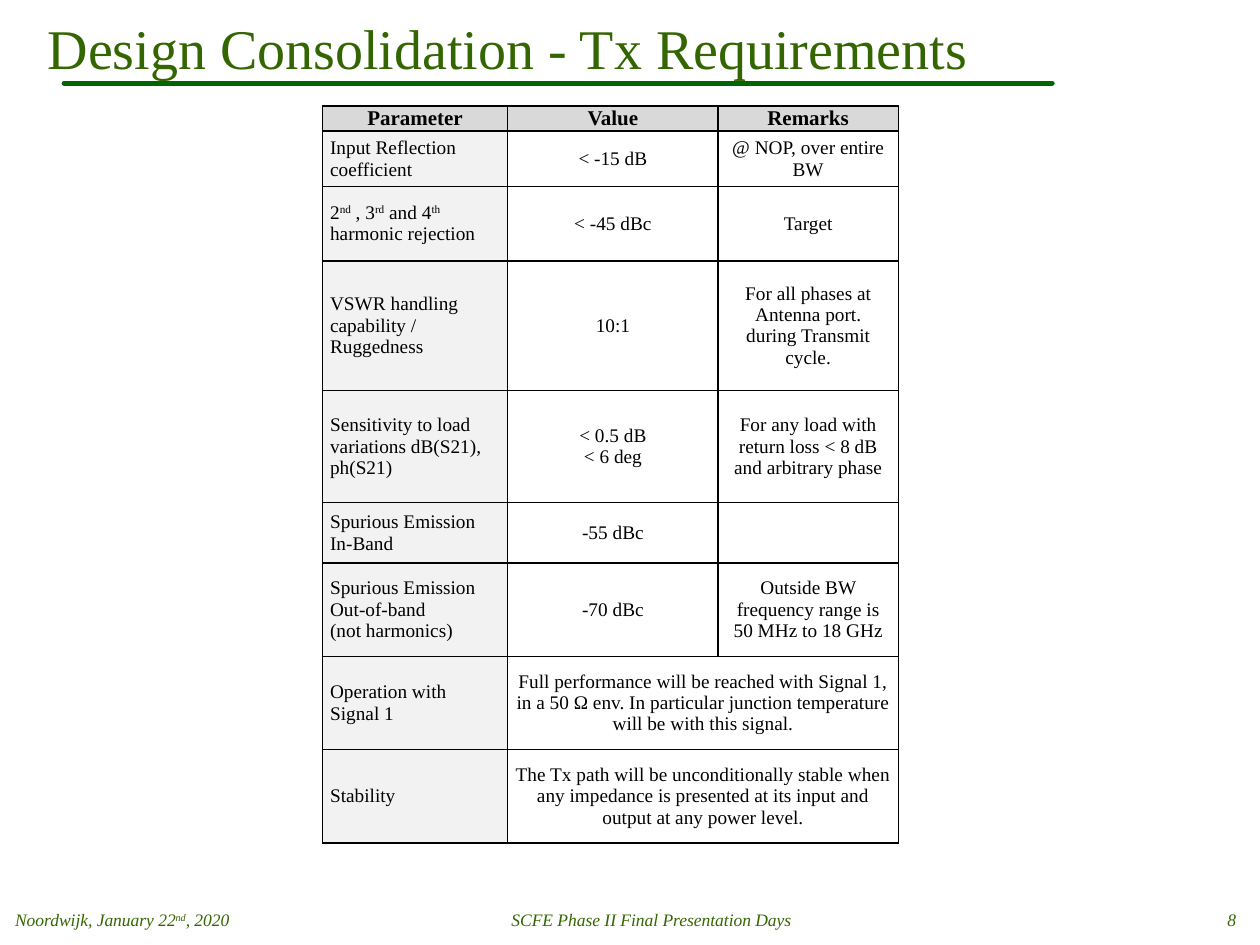
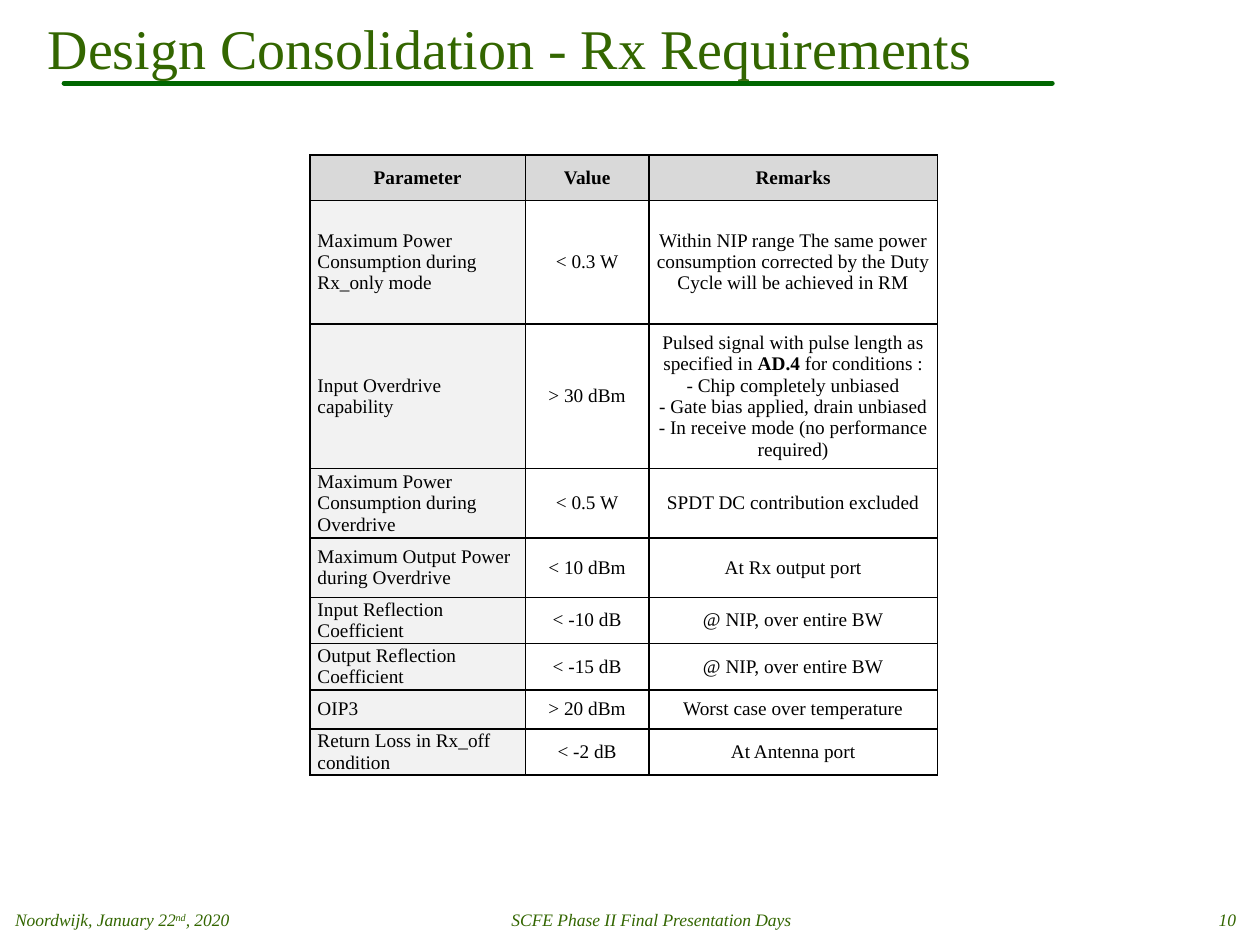
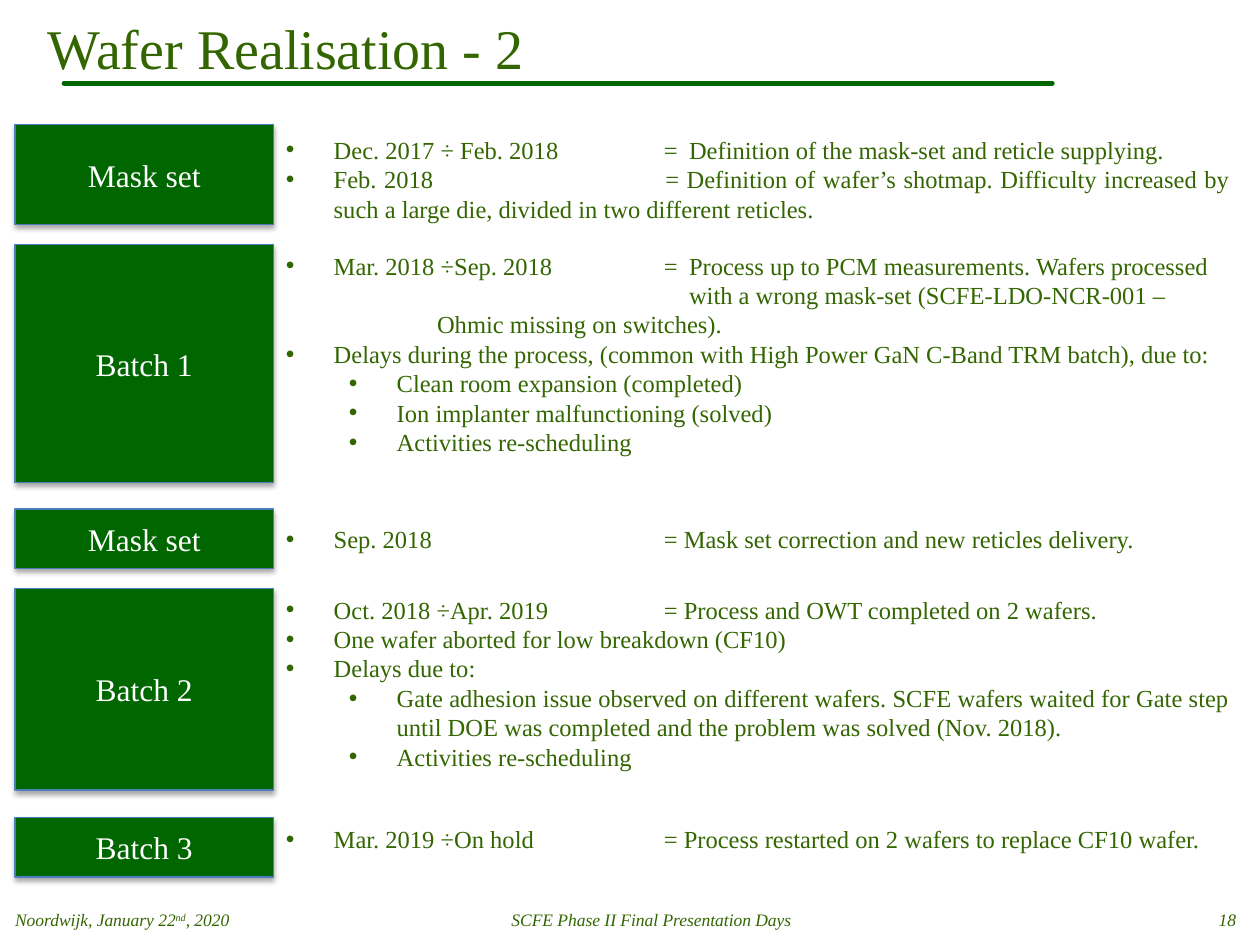
from lxml import etree
from pptx import Presentation
from pptx.dml.color import RGBColor
from pptx.enum import shapes, text
from pptx.oxml import ns
from pptx.util import Inches, Pt

FONT = "Times New Roman"
TEXT_GREEN = RGBColor(0x33, 0x66, 0x00)
BAND_GREEN = RGBColor(0x00, 0x66, 0x00)
BOX_EDGE = RGBColor(0x4B, 0x7E, 0xBC)
HEADER_GREY = RGBColor(0xD9, 0xD9, 0xD9)
LABEL_GREY = RGBColor(0xF2, 0xF2, 0xF2)
WHITE = RGBColor(0xFF, 0xFF, 0xFF)
BLACK = RGBColor(0x00, 0x00, 0x00)

LEFT = text.PP_ALIGN.LEFT
CENTER = text.PP_ALIGN.CENTER
RIGHT = text.PP_ALIGN.RIGHT
JUSTIFY = text.PP_ALIGN.JUSTIFY
MIDDLE = text.MSO_ANCHOR.MIDDLE


# ---- Shared helpers ----
def add_element(parent, tag, **attributes):
    element = etree.SubElement(parent, ns.qn(tag))
    for name, value in attributes.items():
        element.set(name, str(value))
    return element


def add_runs(paragraph, content, size, color, bold=False, italic=False):
    """Add runs; ^...^ marks superscript and *...* marks bold."""
    for i, part in enumerate(content.split("^")):
        for j, piece in enumerate(part.split("*")):
            if not piece:
                continue
            run = paragraph.add_run()
            run.text = piece
            run.font.name = FONT
            run.font.size = Pt(size)
            run.font.color.rgb = color
            run.font.bold = bold or j % 2 == 1
            run.font.italic = italic
            if i % 2:
                run.font._element.set("baseline", "30000")


def add_textbox(slide, left, top, width, height):
    return slide.shapes.add_textbox(
        Inches(left), Inches(top), Inches(width), Inches(height)).text_frame


# ---- Title, rule and footers of every slide ----
def add_title(slide, title):
    frame = add_textbox(slide, 0.28, 0.07, 8.19, 0.61)
    frame.word_wrap = True
    frame.vertical_anchor = MIDDLE
    add_runs(frame.paragraphs[0], title, 32, TEXT_GREEN)


def add_title_rule(slide):
    rule = slide.shapes.add_connector(
        shapes.MSO_CONNECTOR.STRAIGHT,
        Inches(0.51), Inches(0.66), Inches(8.35), Inches(0.66))
    rule.line.color.rgb = BAND_GREEN
    rule.line.width = Pt(3)
    rule.line._get_or_add_ln().set("cap", "rnd")
    add_element(rule._element.spPr, "a:effectLst")


def add_footers(slide, number):
    footers = [
        (0.12, 1.89, LEFT, "Noordwijk, January 22^nd^, 2020"),
        (4.06, 2.4, LEFT, "SCFE Phase II Final Presentation Days"),
        (8.39, 1.42, RIGHT, str(number)),
    ]
    for left, width, alignment, content in footers:
        frame = add_textbox(slide, left, 7.14, width, 0.32)
        frame.word_wrap = True
        frame.vertical_anchor = MIDDLE
        frame.margin_left = frame.margin_right = 0
        frame.margin_top = frame.margin_bottom = Inches(0.08)
        paragraph = frame.paragraphs[0]
        paragraph.alignment = alignment
        add_runs(paragraph, content, 10, TEXT_GREEN, italic=True)


def add_base_slide(presentation, title, number):
    slide = presentation.slides.add_slide(presentation.slide_layouts[6])
    add_title_rule(slide)
    add_footers(slide, number)
    add_title(slide, title)
    return slide


# ---- Requirement tables ----
def add_borders(cell):
    properties = cell._tc.get_or_add_tcPr()
    for side in ("a:lnL", "a:lnR", "a:lnT", "a:lnB"):
        line = add_element(properties, side, w=Pt(1))
        fill = add_element(line, "a:solidFill")
        add_element(fill, "a:srgbClr", val=BLACK)


def format_cell(cell, content, is_header, is_label, size):
    add_borders(cell)
    if is_header or is_label:
        cell.fill.solid()
        cell.fill.fore_color.rgb = HEADER_GREY if is_header else LABEL_GREY
    else:
        cell.fill.background()
    cell.vertical_anchor = MIDDLE
    cell.margin_left = cell.margin_right = Inches(0.06)
    cell.margin_top = cell.margin_bottom = 0
    for i, line in enumerate((content or "").split("\n")):
        frame = cell.text_frame
        paragraph = frame.add_paragraph() if i else frame.paragraphs[0]
        paragraph.alignment = LEFT if is_label and not is_header else CENTER
        add_runs(paragraph, line, size, BLACK, bold=is_header)


def add_requirements(slide, box, widths, heights, rows, header_size):
    """Fill a table; None joins a cell with the one on its left."""
    table = slide.shapes.add_table(
        len(rows), len(widths), *(Inches(length) for length in box)).table
    table.first_row = table.horz_banding = False
    for column, width in zip(table.columns, widths):
        column.width = Inches(width)
    for row, height in zip(table.rows, heights):
        row.height = Inches(height)
    for i, row in enumerate(rows):
        for j, content in enumerate(row):
            format_cell(table.cell(i, j), content, i == 0, j == 0,
                        11 if i else header_size)
            if content is None:
                table.cell(i, j - 1).merge(table.cell(i, j))


HEADER = ("Parameter", "Value", "Remarks")

TX_ROWS = [
    HEADER,
    ("Input Reflection coefficient", "< -15 dB", "@ NOP, over entire BW"),
    ("2^nd^ , 3^rd^ and 4^th^ harmonic rejection", "< -45 dBc", "Target"),
    ("VSWR handling capability / Ruggedness", "10:1",
     "For all phases at Antenna port.\nduring Transmit cycle."),
    ("Sensitivity to load\nvariations dB(S21), ph(S21)",
     "< 0.5 dB\n< 6 deg",
     "For any load with return loss < 8 dB and arbitrary phase"),
    ("Spurious Emission In-Band", "-55 dBc", ""),
    ("Spurious Emission Out-of-band\n(not harmonics)", "-70 dBc",
     "Outside BW frequency range is 50 MHz to 18 GHz"),
    ("Operation with Signal 1",
     "Full performance will be reached with Signal 1, in a 50 Ω env. "
     "In particular junction temperature will be with this signal.", None),
    ("Stability",
     "The Tx path will be unconditionally stable when any impedance is "
     "presented at its input and output at any power level.", None),
]

RX_ROWS = [
    HEADER,
    ("Maximum Power Consumption during Rx_only mode", "< 0.3 W",
     "Within NIP range The same power consumption corrected by the Duty "
     "Cycle will be achieved in RM"),
    ("Input Overdrive capability", "> 30 dBm",
     "Pulsed signal with pulse length as specified in *AD.4* for conditions :\n"
     "- Chip completely unbiased\n"
     "- Gate bias applied, drain unbiased\n"
     "- In receive mode (no performance required)"),
    ("Maximum Power Consumption during Overdrive", "< 0.5 W",
     "SPDT DC contribution excluded"),
    ("Maximum Output Power during Overdrive", "< 10 dBm", "At Rx output port"),
    ("Input Reflection Coefficient", "< -10 dB", "@ NIP, over entire BW"),
    ("Output Reflection Coefficient", "< -15 dB", "@ NIP, over entire BW"),
    ("OIP3", "> 20 dBm", "Worst case over temperature"),
    ("Return Loss in Rx_off condition", "< -2 dB", "At Antenna port"),
]


# ---- Wafer timeline ----
def add_phase_box(slide, top, height, label):
    box = slide.shapes.add_shape(
        shapes.MSO_SHAPE.RECTANGLE,
        Inches(0.12), Inches(top), Inches(2.05), Inches(height))
    box.fill.solid()
    box.fill.fore_color.rgb = BAND_GREEN
    box.line.color.rgb = BOX_EDGE
    box.line.width = Pt(0.75)
    # Soft shadow below the box
    effects = add_element(box._element.spPr, "a:effectLst")
    shadow = add_element(effects, "a:outerShdw", blurRad=Pt(3.1), dist=Pt(1.8),
                         dir=90 * 60000, rotWithShape=0)
    color = add_element(shadow, "a:srgbClr", val=BLACK)
    add_element(color, "a:alpha", val=35000)
    box.text_frame.vertical_anchor = MIDDLE
    paragraph = box.text_frame.paragraphs[0]
    paragraph.alignment = CENTER
    add_runs(paragraph, label, 18, WHITE)


def set_indent(paragraph, margin, bullet):
    properties = paragraph._p.get_or_add_pPr()
    properties.set("marL", str(Inches(margin)))
    properties.set("indent", str(Inches(-0.38 if bullet else 0)))
    if bullet:
        add_element(properties, "a:buFont", typeface="Arial")
        add_element(properties, "a:buChar", char="•")
    # Tab stops for the equals sign and the text after it
    tabs = add_element(properties, "a:tabLst")
    for position in (3.0, 3.2):
        add_element(tabs, "a:tab", pos=Inches(position), algn="l")


def add_phase_notes(slide, top, height, notes):
    frame = add_textbox(slide, 2.17, top, 7.69, height)
    frame.word_wrap = True
    frame.auto_size = text.MSO_AUTO_SIZE.SHAPE_TO_FIT_TEXT
    for i, (style, content) in enumerate(notes):
        margin, bullet, alignment = NOTE_STYLES[style]
        paragraph = frame.add_paragraph() if i else frame.paragraphs[0]
        set_indent(paragraph, margin, bullet)
        paragraph.alignment = alignment
        add_runs(paragraph, content, 14, TEXT_GREEN)


# Style: left margin, bullet, alignment
NOTE_STYLES = {
    "item": (0.38, True, LEFT),
    "justified item": (0.38, True, JUSTIFY),
    "detail": (0.88, True, LEFT),
    "justified detail": (0.88, True, JUSTIFY),
    "continued": (3.2, False, LEFT),
    "continued left": (1.2, False, LEFT),
}

# Label, box top and height, notes top and height, notes
PHASES = [
    ("Mask set", 0.99, 0.79, 1.02, 0.81, [
        ("item", "Dec. 2017 ÷ Feb. 2018\t=\tDefinition of the mask-set and "
                 "reticle supplying."),
        ("justified item", "Feb. 2018\t= Definition of wafer’s shotmap. "
                           "Difficulty increased by such a large die, divided "
                           "in two different reticles."),
    ]),
    ("Batch 1", 1.94, 1.89, 1.94, 1.75, [
        ("item", "Mar. 2018 ÷Sep. 2018\t=\tProcess up to PCM measurements. "
                 "Wafers processed"),
        ("continued", "with a wrong mask-set (SCFE-LDO-NCR-001 –"),
        ("continued left", "Ohmic missing on switches)."),
        ("item", "Delays during the process, (common with High Power GaN "
                 "C-Band TRM batch), due to:"),
        ("detail", "Clean room expansion (completed)"),
        ("detail", "Ion implanter malfunctioning (solved)"),
        ("detail", "Activities re-scheduling"),
    ]),
    ("Mask set", 4.04, 0.47, 4.11, 0.34, [
        ("item", "Sep. 2018\t= Mask set correction and new reticles delivery."),
    ]),
    ("Batch 2", 4.67, 1.6, 4.67, 1.51, [
        ("item", "Oct. 2018 ÷Apr. 2019\t= Process and OWT completed on 2 wafers."),
        ("item", "One wafer aborted for low breakdown (CF10)"),
        ("justified item", "Delays due to:"),
        ("justified detail", "Gate adhesion issue observed on different wafers. "
                             "SCFE wafers waited for Gate step until DOE was "
                             "completed and the problem was solved (Nov. 2018)."),
        ("justified detail", "Activities re-scheduling"),
    ]),
    ("Batch 3", 6.49, 0.47, 6.49, 0.34, [
        ("item", "Mar. 2019 ÷On hold\t= Process restarted on 2 wafers to "
                 "replace CF10 wafer."),
    ]),
]


def main():
    presentation = Presentation()
    presentation.slide_width = Inches(10)
    presentation.slide_height = Inches(7.5)

    slide = add_base_slide(
        presentation, "Design Consolidation - Tx Requirements", 8)
    add_requirements(
        slide, (2.56, 0.84, 4.57, 5.85), (1.47, 1.67, 1.43),
        (0.18, 0.44, 0.59, 1.03, 0.89, 0.48, 0.74, 0.74, 0.74),
        TX_ROWS, header_size=12)

    slide = add_base_slide(
        presentation, "Design Consolidation - Rx Requirements", 10)
    add_requirements(
        slide, (2.46, 1.23, 4.98, 4.8), (1.71, 0.98, 2.29),
        (0.36, 0.98, 1.15, 0.47, 0.47, 0.31, 0.31, 0.31, 0.31),
        RX_ROWS, header_size=11)

    slide = add_base_slide(presentation, "Wafer Realisation - 2", 18)
    for label, box_top, box_height, notes_top, notes_height, notes in PHASES:
        add_phase_box(slide, box_top, box_height, label)
        add_phase_notes(slide, notes_top, notes_height, notes)

    presentation.save("out.pptx")


if __name__ == "__main__":
    main()
